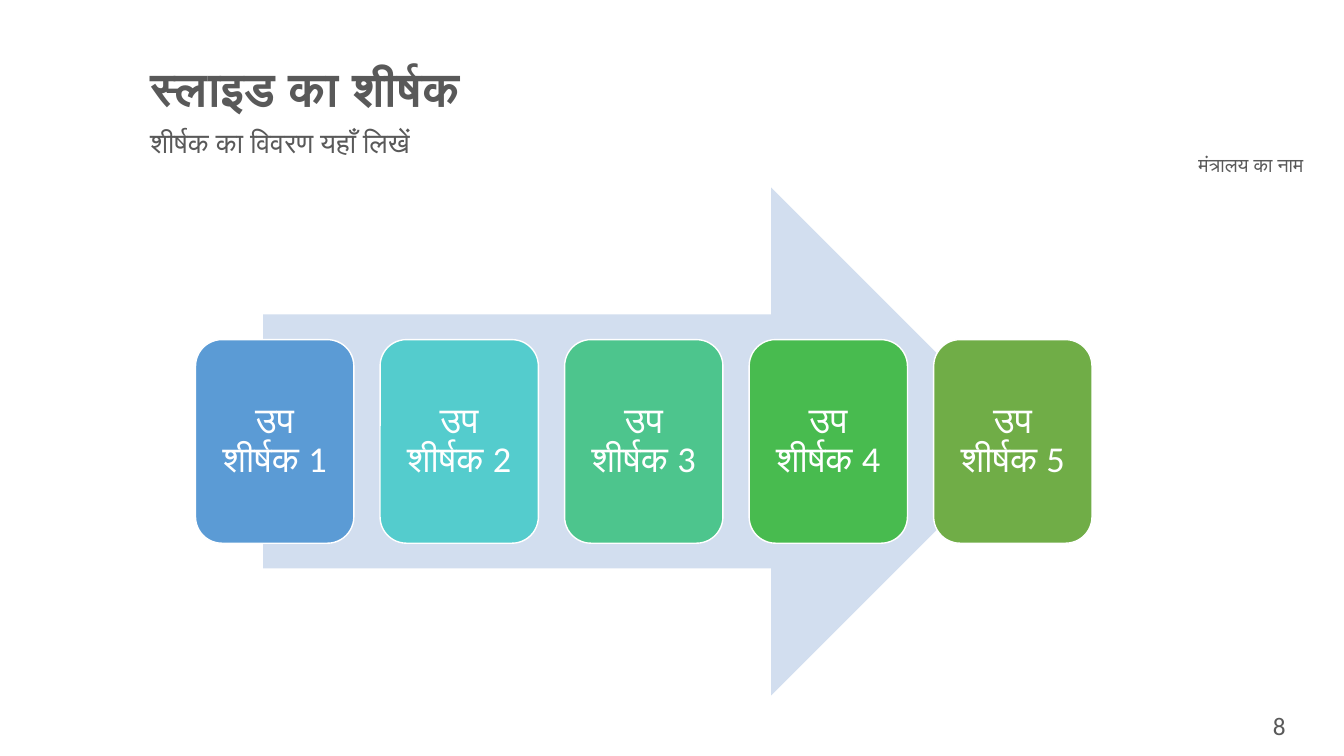
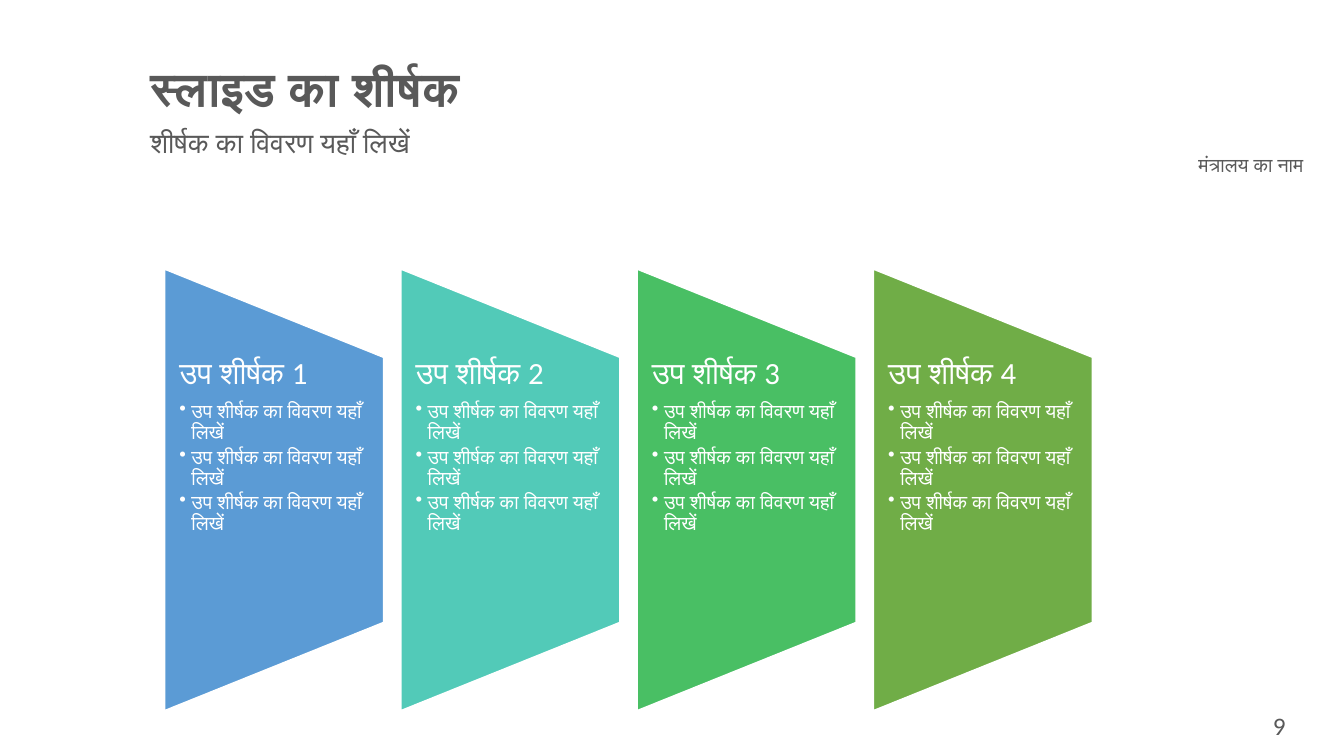
from lxml import etree
from pptx import Presentation
from pptx import util as u
from pptx.dml.color import RGBColor
from pptx.enum import shapes, text
from pptx.oxml.ns import qn

GREY = RGBColor(0x59, 0x59, 0x59)
WHITE = RGBColor(0xFF, 0xFF, 0xFF)
PALE = RGBColor(0xD2, 0xDE, 0xEF)
BLUE = RGBColor(0x5B, 0x9B, 0xD5)
CYAN = RGBColor(0x54, 0xCC, 0xCD)
TEAL = RGBColor(0x52, 0xCA, 0xB8)
MINT = RGBColor(0x4D, 0xC5, 0x8D)
GREEN = RGBColor(0x48, 0xBB, 0x4F)
LEAF = RGBColor(0x49, 0xBF, 0x64)
OLIVE = RGBColor(0x70, 0xAD, 0x47)

deck = Presentation()
deck.slide_width, deck.slide_height = u.Inches(13.333), u.Inches(7.5)
# Grid: one column and one row are 1% of the slide's width and height
COL, ROW = deck.slide_width / 100, deck.slide_height / 100


def write(frame, words, size, color=GREY, font="Calibri", bold=False,
          align=text.PP_ALIGN.LEFT, lead=1.0, after=0, bullet=False):
    """Add one paragraph; the first call fills the empty one."""
    frame.word_wrap = True
    para = frame.paragraphs[0]
    if para.runs:
        para = frame.add_paragraph()
    if bullet:
        props = para._p.get_or_add_pPr()
        props.set("marL", str(u.Inches(0.12)))
        props.set("indent", str(-u.Inches(0.12)))
        etree.SubElement(props, qn("a:buChar")).set("char", "•")
    para.alignment, para.line_spacing = align, lead
    para.space_after = u.Pt(after)
    run = para.add_run()
    run.text = words
    run.font.name, run.font.size = font, u.Pt(size)
    run.font.bold, run.font.color.rgb = bold, color


def draw(page, kind, x, y, w, h, fill, edge=0):
    """Draw a filled shape, with a white edge if a width is given."""
    form = page.shapes.add_shape(kind, *map(int, (x, y, w, h)))
    form.shadow.inherit = False
    form.fill.solid()
    form.fill.fore_color.rgb = fill
    if edge:
        form.line.color.rgb, form.line.width = WHITE, u.Pt(edge)
    else:
        form.line.fill.background()
    return form


# Text on every slide: left, top, width, height, words, format
HEAD = [
    (88.43, 19.6, 11.57, 4.53, "मंत्रालय का नाम", dict(size=14, font="Arial")),
    (10.43, 8, 72.08, 7.33, "स्लाइड का शीर्षक",
     dict(size=34, bold=True, lead=0.9)),
    (10.43, 16.4, 72.08, 8.4, "शीर्षक का विवरण यहाँ लिखें",
     dict(size=20, lead=0.9)),
]
pages = []
for num in (8, 9):
    page = deck.slides.add_slide(deck.slide_layouts[6])
    foot = (90.75, 93.33, 8.85, 6, str(num),
            dict(size=18, align=text.PP_ALIGN.CENTER))
    for x, y, w, h, words, style in HEAD + [foot]:
        box = page.shapes.add_textbox(int(x * COL), int(y * ROW),
                                      int(w * COL), int(h * ROW))
        write(box.text_frame, words, **style)
    pages.append(page)
steps, panels = pages

# Five cards on a broad arrow
draw(steps, shapes.MSO_SHAPE.RIGHT_ARROW, 19.58 * COL, 24.8 * ROW,
     56.7 * COL, 67.2 * ROW, PALE)
for i, hue in enumerate([BLUE, CYAN, MINT, GREEN, OLIVE]):
    card = draw(steps, shapes.MSO_SHAPE.ROUNDED_RECTANGLE,
                (14.55 + 13.73 * i) * COL, 44.93 * ROW,
                11.78 * COL, 26.93 * ROW, hue, edge=1)
    frame = card.text_frame
    frame.margin_left = frame.margin_right = u.Inches(0.11)
    frame.margin_top = frame.margin_bottom = u.Inches(0.11)
    frame.vertical_anchor = text.MSO_ANCHOR.MIDDLE
    write(frame, f"उप शीर्षक {i + 1}", 26, WHITE, lead=0.9,
          align=text.PP_ALIGN.CENTER)

# Four tapered panels, turned a quarter to the left, each under its text
wide, tall, mid = 16.35 * COL, 58.53 * ROW, 64.8 * ROW
for i, hue in enumerate([BLUE, TEAL, LEAF, OLIVE]):
    left = (12.22 + 17.58 * i) * COL
    panel = draw(panels, shapes.MSO_SHAPE.FLOWCHART_MANUAL_OPERATION,
                 left + (wide - tall) / 2, mid - wide / 2,
                 tall, wide, hue, edge=1.5)
    panel.rotation = 270
    box = panels.shapes.add_textbox(int(left), int(47.33 * ROW),
                                    int(wide), int(35.07 * ROW))
    frame = box.text_frame
    frame.margin_left = frame.margin_right = u.Inches(0.15)
    frame.margin_top = frame.margin_bottom = 0
    write(frame, f"उप शीर्षक {i + 1}", 22, WHITE, lead=0.9, after=7.7)
    for _ in range(3):
        write(frame, "उप शीर्षक का विवरण यहाँ लिखें", 14, WHITE,
              lead=0.9, after=2.1, bullet=True)

deck.save("out.pptx")
